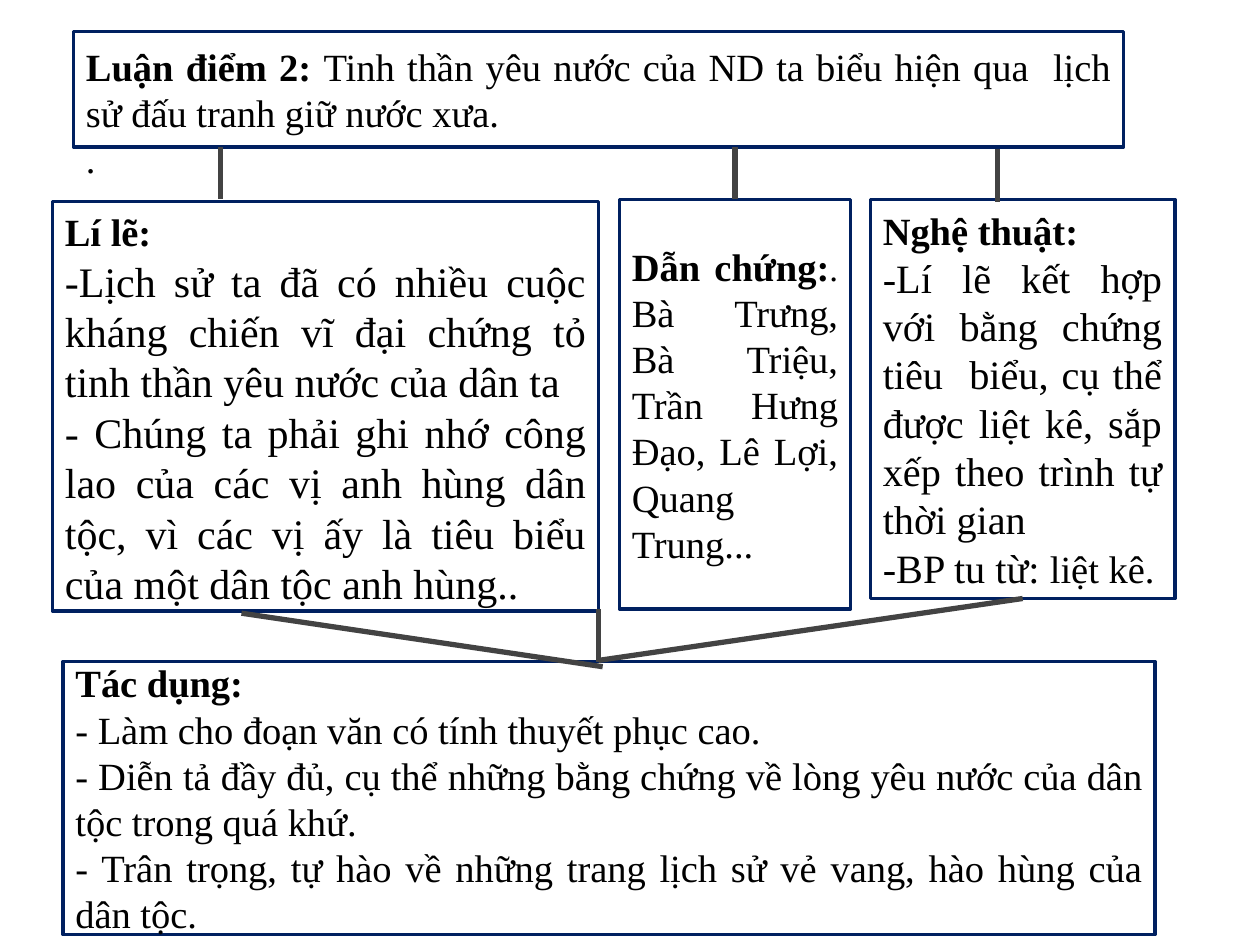
import pptx
import pptx.dml.color
import pptx.enum.shapes
import pptx.enum.text
import pptx.oxml.ns
import pptx.util
from lxml import etree

PX = 7620  # 120 px to the inch
FONT = "Times New Roman"
NAVY, GREY, BLACK, WHITE = "002060", "434343", "000000", "FFFFFF"


def px(n):
    return pptx.util.Emu(n * PX)


def tint(code):
    return pptx.dml.color.RGBColor.from_string(code)


deck = pptx.Presentation()
deck.slide_width, deck.slide_height = px(1200), px(900)
slide = deck.slides.add_slide(deck.slide_layouts[6])

MID = pptx.enum.text.MSO_ANCHOR.MIDDLE
TOP = pptx.enum.text.MSO_ANCHOR.TOP

# Each box: place, anchor, top inset, paragraphs of runs (text, size, bold)
boxes = [
    ((70, 30, 1000, 110), TOP, 11, [
        [("Luận điểm 2: ", 22, True),
         ("Tinh thần yêu nước của ND ta biểu hiện qua  lịch sử "
          "đấu tranh giữ nước xưa.", 22, False)],
        [(".", 22, False)],
    ]),
    ((50, 192, 520, 390), MID, 6, [
        [("Lí lẽ:", 22, True), (" ", 24, False)],
        [("-Lịch sử ta đã có nhiều cuộc kháng chiến vĩ đại chứng tỏ "
          "tinh thần yêu nước của dân ta", 24, False)],
        [("- Chúng ta phải ghi nhớ công lao của các vị anh hùng dân tộc, "
          "vì các vị ấy là tiêu biểu của một dân tộc anh hùng..", 24, False)],
    ]),
    ((590, 190, 220, 390), MID, 6, [
        [("Dẫn chứng:", 22, True), (". ", 20, False),
         ("Bà Trưng, Bà Triệu, Trần Hưng Đạo, Lê Lợi, Quang Trung... ",
          22, False)],
    ]),
    ((829, 190, 290, 380), MID, 6, [
        [("Nghệ thuật: ", 22, True)],
        [("-Lí lẽ kết hợp với bằng chứng tiêu  biểu, cụ thể được liệt kê, "
          "sắp xếp theo trình tự thời gian", 23, False)],
        [("-BP tu từ: ", 23, False), ("liệt kê.", 22, False)],
    ]),
    ((60, 630, 1040, 260), MID, 6, [
        [("Tác dụng: ", 22, True)],
        [("- Làm cho đoạn văn có tính thuyết phục cao. ", 22, False)],
        [("- Diễn tả đầy đủ, cụ thể những bằng chứng về lòng yêu nước "
          "của dân tộc trong quá khứ.", 22, False)],
        [("- Trân trọng, tự hào về những trang lịch sử vẻ vang, hào hùng "
          "của dân tộc.", 22, False)],
    ]),
]

for place, anchor, inset, paras in boxes:
    box = slide.shapes.add_shape(
        pptx.enum.shapes.MSO_SHAPE.ROUNDED_RECTANGLE, *map(px, place))
    box.adjustments[0] = 0
    box.shadow.inherit = False
    box.fill.solid()
    box.fill.fore_color.rgb = tint(WHITE)
    box.line.color.rgb = tint(NAVY)
    box.line.width = pptx.util.Pt(2)
    frame = box.text_frame
    frame.word_wrap = True
    frame.vertical_anchor = anchor
    frame.margin_top = px(inset)
    for i, runs in enumerate(paras):
        para = frame.add_paragraph() if i else frame.paragraphs[0]
        para.alignment = pptx.enum.text.PP_ALIGN.JUSTIFY
        for text, size, bold in runs:
            run = para.add_run()
            run.text = text
            run.font.name = FONT
            run.font.size = pptx.util.Pt(size)
            run.font.bold = bold
            run.font.color.rgb = tint(BLACK)

# Links from the thesis down to the three boxes, then on to the effect
links = [
    (210, 140, 210, 190),
    (700, 140, 700, 190),
    (950, 142, 950, 192),
    (230, 584, 574, 635),
    (570, 580, 570, 630),
    (570, 629, 974, 570),
]
for ends in links:
    link = slide.shapes.add_connector(
        pptx.enum.shapes.MSO_CONNECTOR.STRAIGHT, *map(px, ends))
    link.line.color.rgb = tint(GREY)
    link.line.width = pptx.util.Pt(3)
    etree.SubElement(link._element.spPr, pptx.oxml.ns.qn("a:effectLst"))

deck.save("out.pptx")
